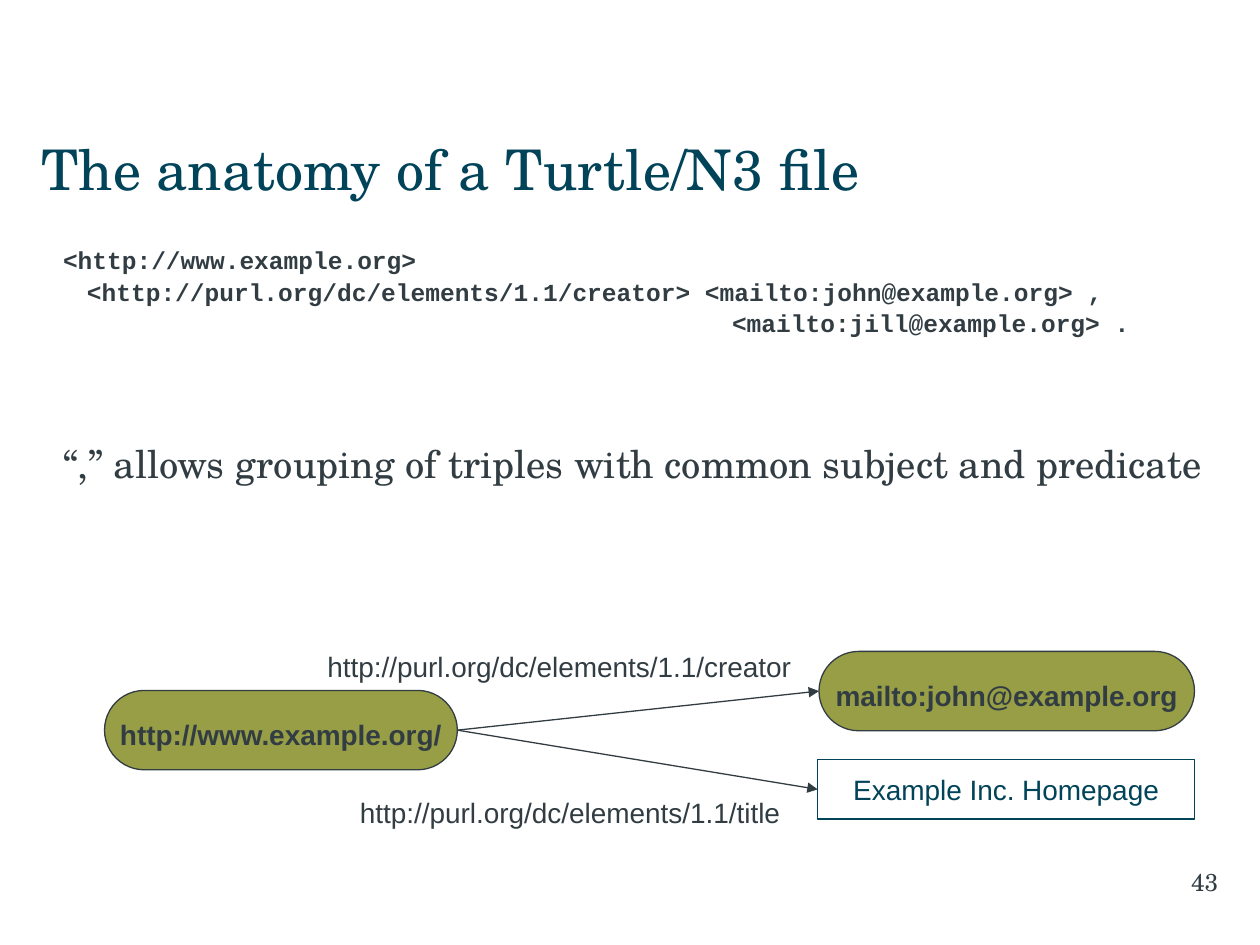
from dataclasses import dataclass

from lxml import etree
from pptx import Presentation
from pptx import util as u
from pptx.dml import color
from pptx.enum import shapes, text
from pptx.oxml import ns

INK = "323D43"
TEAL = "014359"
OLIVE = "979E45"
WHITE = "FFFFFF"
SERIF = "TeX Gyre Schola"
SANS = "Arial"
MONO = "Courier New"


@dataclass
class Box:
    left: float
    top: float
    width: float
    height: float


@dataclass
class Style:
    font: str
    size: float
    color: str = INK
    bold: bool = False


@dataclass
class Node:
    content: str
    box: Box
    kind: shapes.MSO_SHAPE
    fill: str
    line: str
    style: Style
    top_inset: float = 0.05


@dataclass
class BodyLine:
    content: str
    indent: float
    space_after: float
    style: Style


@dataclass
class Label:
    content: str
    box: Box
    style: Style
    align: text.PP_ALIGN
    anchor: text.MSO_ANCHOR
    right_inset: float = 0.1
    wrap: bool = False


def rgb(value: str) -> color.RGBColor:
    return color.RGBColor.from_string(value)


def place(shape, box: Box) -> None:
    shape.left, shape.top = u.Inches(box.left), u.Inches(box.top)
    shape.width, shape.height = u.Inches(box.width), u.Inches(box.height)


def format_runs(paragraph, style: Style) -> None:
    for run in paragraph.runs:
        run.font.name = style.font
        run.font.size = u.Pt(style.size)
        run.font.bold = style.bold
        run.font.color.rgb = rgb(style.color)


def prepare_placeholder(shape, box: Box) -> None:
    place(shape, box)
    shape.text_frame.margin_left = 0
    shape.text_frame.auto_size = text.MSO_AUTO_SIZE.NONE


def fill_title(shape, content: str) -> None:
    prepare_placeholder(shape, Box(0.33, 1, 9.33, 0.67))
    shape.text_frame.text = content
    paragraph = shape.text_frame.paragraphs[0]
    paragraph.alignment = text.PP_ALIGN.LEFT
    format_runs(paragraph, Style(SERIF, 32, TEAL))


def fill_body(shape, lines: list[BodyLine]) -> None:
    prepare_placeholder(shape, Box(0.5, 1.88, 9.25, 2.33))
    shape.text_frame.text = "\n".join(line.content for line in lines)
    for paragraph, line in zip(shape.text_frame.paragraphs, lines):
        paragraph.line_spacing = 1.07
        paragraph.space_before = u.Pt(0)
        paragraph.space_after = u.Pt(line.space_after)
        properties = paragraph._p.get_or_add_pPr()
        properties.set("marL", str(u.Inches(line.indent)))
        properties.set("indent", "0")
        etree.SubElement(properties, ns.qn("a:buNone"))
        format_runs(paragraph, line.style)


def add_node(slide, node: Node):
    shape = slide.shapes.add_shape(node.kind, 0, 0, 0, 0)
    place(shape, node.box)
    if node.kind == shapes.MSO_SHAPE.ROUNDED_RECTANGLE:
        shape.adjustments[0] = 0.5
    shape.shadow.inherit = False
    shape.fill.solid()
    shape.fill.fore_color.rgb = rgb(node.fill)
    shape.line.color.rgb = rgb(node.line)
    shape.line.width = u.Pt(0.75)
    frame = shape.text_frame
    frame.word_wrap = False
    frame.vertical_anchor = text.MSO_ANCHOR.MIDDLE
    frame.margin_top = u.Inches(node.top_inset)
    frame.margin_bottom = u.Inches(0.05)
    frame.text = node.content
    frame.paragraphs[0].alignment = text.PP_ALIGN.CENTER
    format_runs(frame.paragraphs[0], node.style)
    return shape


def add_label(slide, label: Label) -> None:
    shape = slide.shapes.add_textbox(0, 0, 0, 0)
    place(shape, label.box)
    frame = shape.text_frame
    frame.word_wrap = label.wrap
    frame.vertical_anchor = label.anchor
    frame.margin_right = u.Inches(label.right_inset)
    frame.text = label.content
    frame.paragraphs[0].alignment = label.align
    format_runs(frame.paragraphs[0], label.style)


def add_arrow(slide, source, target) -> None:
    arrow = slide.shapes.add_connector(shapes.MSO_CONNECTOR.STRAIGHT, 0, 0, 0, 0)
    arrow.begin_connect(source, 3)
    arrow.end_connect(target, 1)
    arrow.line.color.rgb = rgb(INK)
    arrow.line.width = u.Pt(0.75)
    etree.SubElement(arrow.line._get_or_add_ln(), ns.qn("a:tailEnd"), type="triangle")
    etree.SubElement(arrow._element.spPr, ns.qn("a:effectLst"))


def main() -> None:
    presentation = Presentation()
    presentation.slide_width = u.Inches(10)
    presentation.slide_height = u.Inches(7.5)
    slide = presentation.slides.add_slide(presentation.slide_layouts[1])

    code = Style(MONO, 14, bold=True)
    plain = Style(SANS, 16)
    strong = Style(SANS, 16, bold=True)
    pill = shapes.MSO_SHAPE.ROUNDED_RECTANGLE
    center, middle = text.PP_ALIGN.CENTER, text.MSO_ANCHOR.MIDDLE

    fill_title(slide.shapes.title, "The anatomy of a Turtle/N3 file")
    fill_body(slide.placeholders[1], [
        BodyLine("<http://www.example.org>", 0, 0, code),
        BodyLine("<http://purl.org/dc/elements/1.1/creator> <mailto:john@example.org> ,",
                 0.19, 0, code),
        BodyLine("<mailto:jill@example.org> .", 5.31, 57, code),
        BodyLine("“,” allows grouping of triples with common subject and predicate",
                 0, 18, Style(SERIF, 22)),
    ])

    subject = add_node(slide, Node("http://www.example.org/", Box(0.83, 5.48, 2.8, 0.63),
                                   pill, OLIVE, INK, strong, 0.11))
    objects = [
        Node("mailto:john@example.org", Box(6.5, 5.17, 2.98, 0.63),
             pill, OLIVE, INK, strong, 0.11),
        Node("Example Inc. Homepage", Box(6.49, 6.03, 2.99, 0.47),
             shapes.MSO_SHAPE.RECTANGLE, WHITE, TEAL, Style(SANS, 16, TEAL)),
    ]
    for node in objects:
        add_arrow(slide, subject, add_node(slide, node))

    labels = [
        Label("http://purl.org/dc/elements/1.1/creator", Box(2.46, 5.1, 3.96, 0.37),
              plain, center, middle),
        Label("http://purl.org/dc/elements/1.1/title", Box(2.72, 6.26, 3.61, 0.37),
              plain, center, middle),
        Label("43", Box(7.5, 6.83, 2.17, 0.5), Style(SERIF, 14),
              text.PP_ALIGN.RIGHT, text.MSO_ANCHOR.TOP, 0, True),
    ]
    for label in labels:
        add_label(slide, label)

    presentation.save("out.pptx")


if __name__ == "__main__":
    main()
